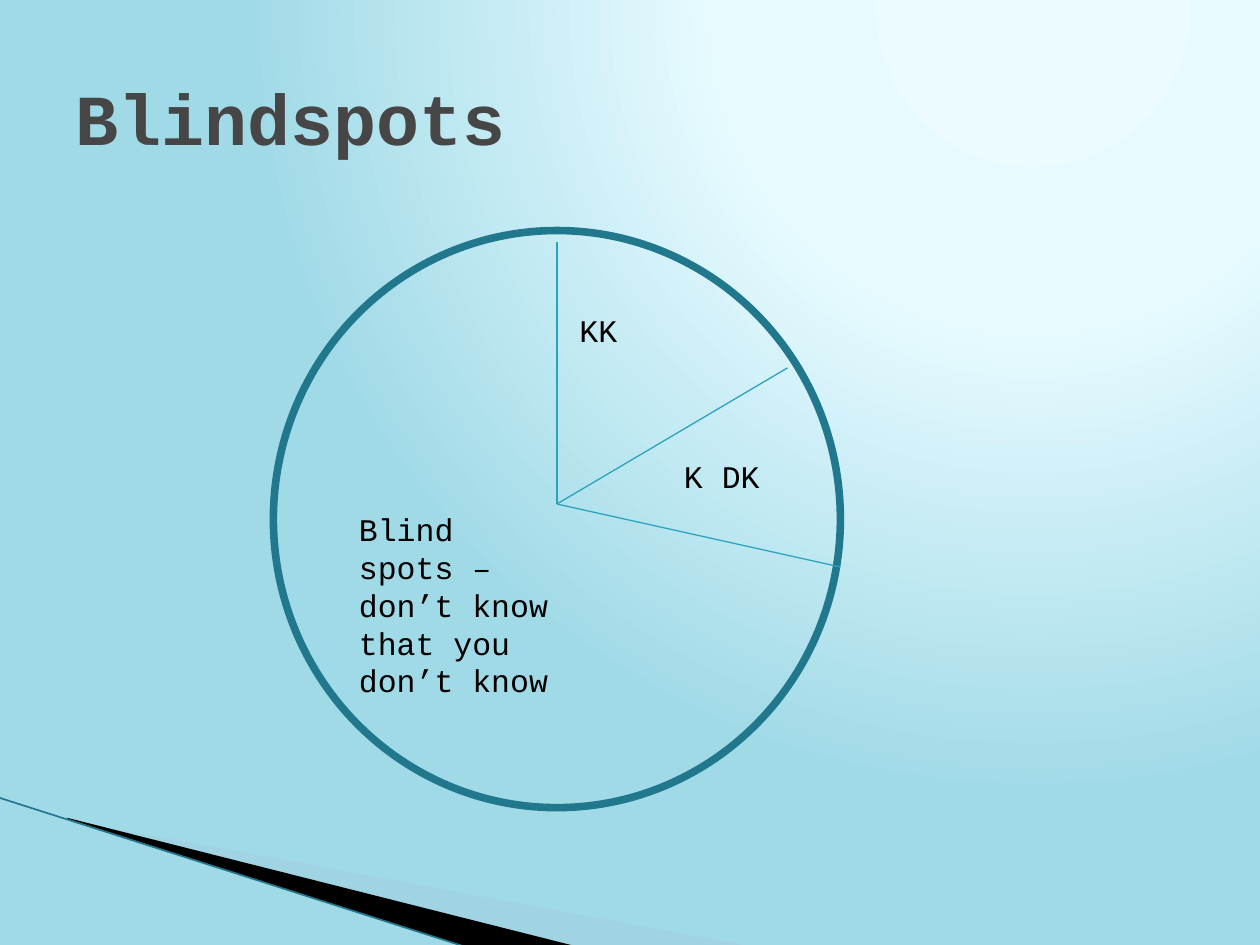
import pptx
import pptx.dml.color
import pptx.enum.shapes
import pptx.enum.text
import pptx.oxml
import pptx.oxml.ns
import pptx.util
from pptx.util import Inches

COLORS = {
    "glow": "EBFBFF",
    "light": "E7FBFF",
    "sky": "A1DAE7",
    "haze": "A0CBDC",
    "black": "000000",
    "title": "464646",
    "ring": "21788D",
    "spoke": "2DA2BF",
}
FONT = "Courier New"


class SlideBuilder:
    """Holds the style and the current slide, and draws each kind of element."""

    def __init__(self, slide):
        self.slide = slide

    def color(self, name):
        return pptx.dml.color.RGBColor.from_string(COLORS[name])

    def background(self, stops):
        fill = self.slide.background.fill
        fill.gradient()
        gradient = next(self.slide.element.iter(pptx.oxml.ns.qn("a:gradFill")))
        stop_xml = "".join(
            f'<a:gs pos="{percent * 1000}"><a:srgbClr val="{COLORS[name]}"/></a:gs>'
            for percent, name in stops
        )
        radial = pptx.oxml.parse_xml(
            f'<a:gradFill {pptx.oxml.ns.nsdecls("a")} rotWithShape="1">'
            f"<a:gsLst>{stop_xml}</a:gsLst>"
            '<a:path path="circle"><a:fillToRect l="65000" b="98000"/></a:path>'
            "</a:gradFill>"
        )
        gradient.getparent().replace(gradient, radial)

    def format_text(self, frame, text, size, color, bold=False):
        frame.text = text
        frame.word_wrap = True
        paragraph = frame.paragraphs[0]
        paragraph.alignment = pptx.enum.text.PP_ALIGN.LEFT
        paragraph.font.name = FONT
        paragraph.font.size = pptx.util.Pt(size)
        paragraph.font.bold = bold
        paragraph.font.color.rgb = self.color(color)

    def title(self, text, left, top, width, height):
        shape = self.slide.shapes.title
        shape.left, shape.top = Inches(left), Inches(top)
        shape.width, shape.height = Inches(width), Inches(height)
        self.format_text(shape.text_frame, text, 41, "title", bold=True)
        shape.text_frame.vertical_anchor = pptx.enum.text.MSO_ANCHOR.MIDDLE

    def label(self, text, left, top, width, height):
        shape = self.slide.shapes.add_textbox(
            Inches(left), Inches(top), Inches(width), Inches(height)
        )
        self.format_text(shape.text_frame, text, 18, "black")
        shape.text_frame.auto_size = pptx.enum.text.MSO_AUTO_SIZE.SHAPE_TO_FIT_TEXT

    def wedge(self, points, color, opacity=100):
        start, *others = [(Inches(x), Inches(y)) for x, y in points]
        builder = self.slide.shapes.build_freeform(*start)
        builder.add_line_segments(others, close=True)
        shape = builder.convert_to_shape()
        shape.shadow.inherit = False
        shape.line.fill.background()
        shape.fill.solid()
        shape.fill.fore_color.rgb = self.color(color)
        if opacity < 100:
            fill_color = next(shape.element.spPr.iter(pptx.oxml.ns.qn("a:srgbClr")))
            alpha = pptx.oxml.parse_xml(
                f'<a:alpha {pptx.oxml.ns.nsdecls("a")} val="{opacity * 1000}"/>'
            )
            fill_color.append(alpha)

    def line(self, start, end, color, width):
        connector = self.slide.shapes.add_connector(
            pptx.enum.shapes.MSO_CONNECTOR.STRAIGHT,
            *(Inches(value) for value in (*start, *end)),
        )
        connector.line.color.rgb = self.color(color)
        connector.line.width = pptx.util.Pt(width)
        effects = pptx.oxml.parse_xml(f'<a:effectLst {pptx.oxml.ns.nsdecls("a")}/>')
        connector.element.spPr.append(effects)

    def ring(self, left, top, width, height):
        shape = self.slide.shapes.add_shape(
            pptx.enum.shapes.MSO_SHAPE.FLOWCHART_CONNECTOR,
            Inches(left), Inches(top), Inches(width), Inches(height),
        )
        shape.shadow.inherit = False
        shape.fill.background()
        shape.line.color.rgb = self.color("ring")
        shape.line.width = pptx.util.Pt(4.33)


def main():
    presentation = pptx.Presentation()
    presentation.slide_width = Inches(10)
    presentation.slide_height = Inches(7.5)
    slide = presentation.slides.add_slide(presentation.slide_layouts[5])
    builder = SlideBuilder(slide)

    builder.background([(0, "glow"), (40, "light"), (100, "sky")])
    builder.wedge([(0.55, 6.51), (5.95, 7.51), (4.56, 7.51), (0.55, 6.5)], "haze", 40)
    builder.wedge([(0.53, 6.49), (4.57, 7.51), (3.72, 7.52), (0.54, 6.5)], "black")
    builder.line((-0.01, 6.33), (3.71, 7.52), "ring", 0.95)

    builder.title("Blindspots", 0.5, 0.3, 9, 1.25)
    builder.ring(2.17, 1.83, 4.5, 4.58)
    hub = (4.42, 4)
    for rim in [(4.42, 1.92), (6.25, 2.92), (6.67, 4.5)]:
        builder.line(hub, rim, "spoke", 0.75)

    builder.label("KK", 4.5, 2.42, 1.25, 0.4)
    builder.label("K DK", 5.33, 3.58, 1.08, 0.42)
    builder.label("Blind spots – don’t know that you don’t know", 2.75, 4, 1.75, 1.31)

    presentation.save("out.pptx")


if __name__ == "__main__":
    main()
